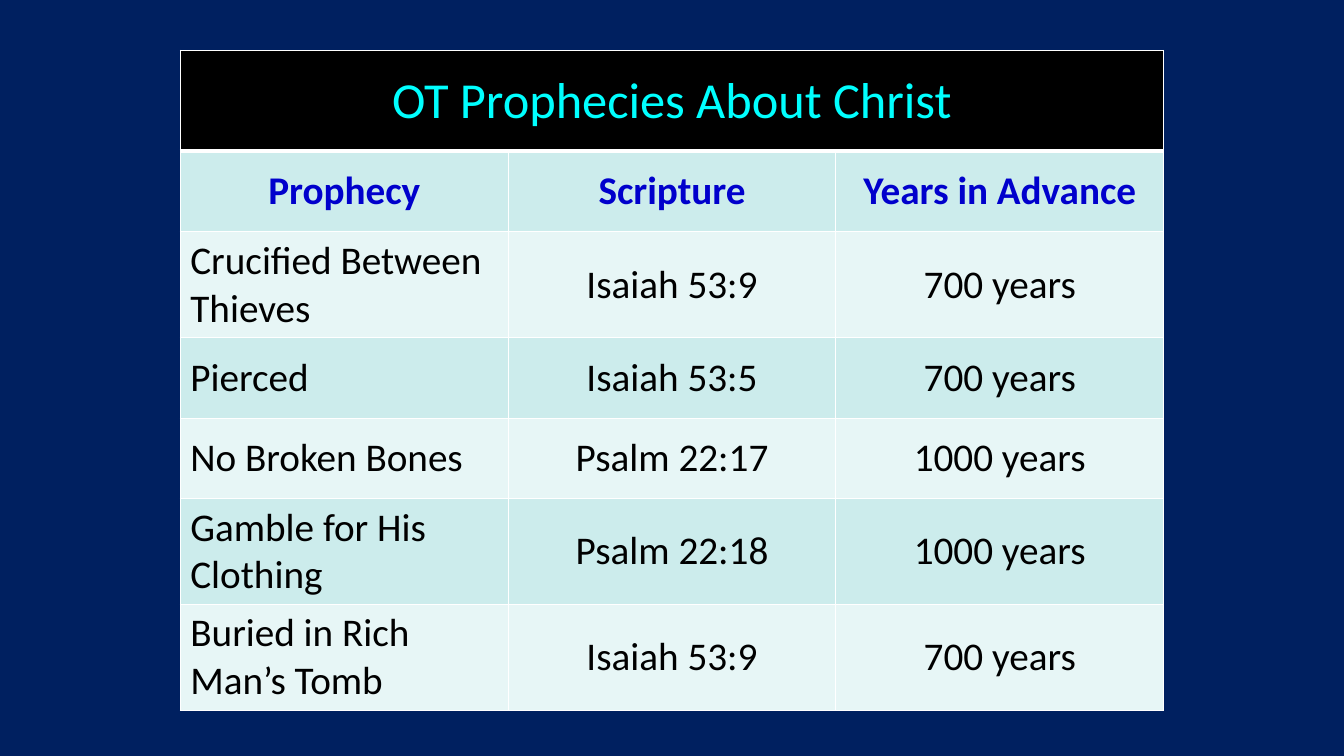
from dataclasses import dataclass

from lxml import etree
from pptx import Presentation
from pptx import util as u
from pptx.dml.color import RGBColor
from pptx.enum import text
from pptx.oxml.ns import qn

# Content
TITLE = "OT Prophecies About Christ"
HEADINGS = ("Prophecy", "Scripture", "Years in Advance")
PROPHECIES = [
    ("Crucified Between Thieves", "Isaiah 53:9", "700 years"),
    ("Pierced", "Isaiah 53:5", "700 years"),
    ("No Broken Bones", "Psalm 22:17", "1000 years"),
    ("Gamble for His Clothing", "Psalm 22:18", "1000 years"),
    ("Buried in Rich Man’s Tomb", "Isaiah 53:9", "700 years"),
]


@dataclass(frozen=True)
class Theme:
    font: str = "Calibri"
    title_size: int = 36
    body_size: int = 28
    background: str = "002060"
    title_fill: str = "000000"
    title_text: str = "00FFFF"
    heading_text: str = "0000CC"
    body_text: str = "000000"
    bands: tuple = ("CCECEC", "E7F6F6")
    border: str = "FFFFFF"
    thin: float = 1
    thick: float = 3


THEME = Theme()

# Layout
SLIDE_WIDTH, SLIDE_HEIGHT = u.Cm(33.87), u.Cm(19.05)
TABLE_TOP = u.Cm(1.27)
COLUMN_WIDTH = u.Cm(8.26)
TITLE_HEIGHT, ROW_HEIGHT = u.Cm(2.54), u.Cm(2.03)


def set_borders(cell, **widths):
    properties = cell._tc.get_or_add_tcPr()
    for side in ("L", "R", "T", "B"):
        width = u.Pt(widths.get(side, THEME.thin))
        line = etree.SubElement(properties, qn(f"a:ln{side}"), w=str(width))
        fill = etree.SubElement(line, qn("a:solidFill"))
        etree.SubElement(fill, qn("a:srgbClr"), val=THEME.border)


def write(cell, words, *, fill, color, size=THEME.body_size, bold=False,
          align=text.PP_ALIGN.CENTER):
    cell.fill.solid()
    cell.fill.fore_color.rgb = RGBColor.from_string(fill)
    cell.vertical_anchor = text.MSO_ANCHOR.MIDDLE
    paragraph = cell.text_frame.paragraphs[0]
    paragraph.alignment = align
    run = paragraph.add_run()
    run.text = words
    run.font.name = THEME.font
    run.font.size = u.Pt(size)
    run.font.bold = bold
    run.font.color.rgb = RGBColor.from_string(color)


def add_prophecy_table(slide):
    body = [HEADINGS, *PROPHECIES]
    column_count, row_count = len(HEADINGS), len(body) + 1
    width = COLUMN_WIDTH * column_count
    height = TITLE_HEIGHT + ROW_HEIGHT * len(body)
    left = (SLIDE_WIDTH - width) // 2
    table = slide.shapes.add_table(
        row_count, column_count, left, TABLE_TOP, width, height).table
    for column in table.columns:
        column.width = COLUMN_WIDTH
    for index, row in enumerate(table.rows):
        row.height = ROW_HEIGHT if index else TITLE_HEIGHT

    # Title row, with a thick rule below it
    for column in range(column_count):
        set_borders(table.cell(0, column), B=THEME.thick)
    table.cell(0, 0).merge(table.cell(0, column_count - 1))
    write(table.cell(0, 0), TITLE, fill=THEME.title_fill,
          color=THEME.title_text, size=THEME.title_size)

    # Headings and banded rows
    for index, entries in enumerate(body):
        is_heading = index == 0
        for column, words in enumerate(entries):
            cell = table.cell(index + 1, column)
            set_borders(cell, T=THEME.thick if is_heading else THEME.thin)
            centred = is_heading or column > 0
            write(cell, words, fill=THEME.bands[index % 2], bold=is_heading,
                  color=THEME.heading_text if is_heading else THEME.body_text,
                  align=text.PP_ALIGN.CENTER if centred else text.PP_ALIGN.LEFT)


def main():
    presentation = Presentation()
    presentation.slide_width = SLIDE_WIDTH
    presentation.slide_height = SLIDE_HEIGHT
    slide = presentation.slides.add_slide(presentation.slide_layouts[6])
    slide.background.fill.solid()
    slide.background.fill.fore_color.rgb = RGBColor.from_string(THEME.background)
    add_prophecy_table(slide)
    presentation.save("out.pptx")


if __name__ == "__main__":
    main()
